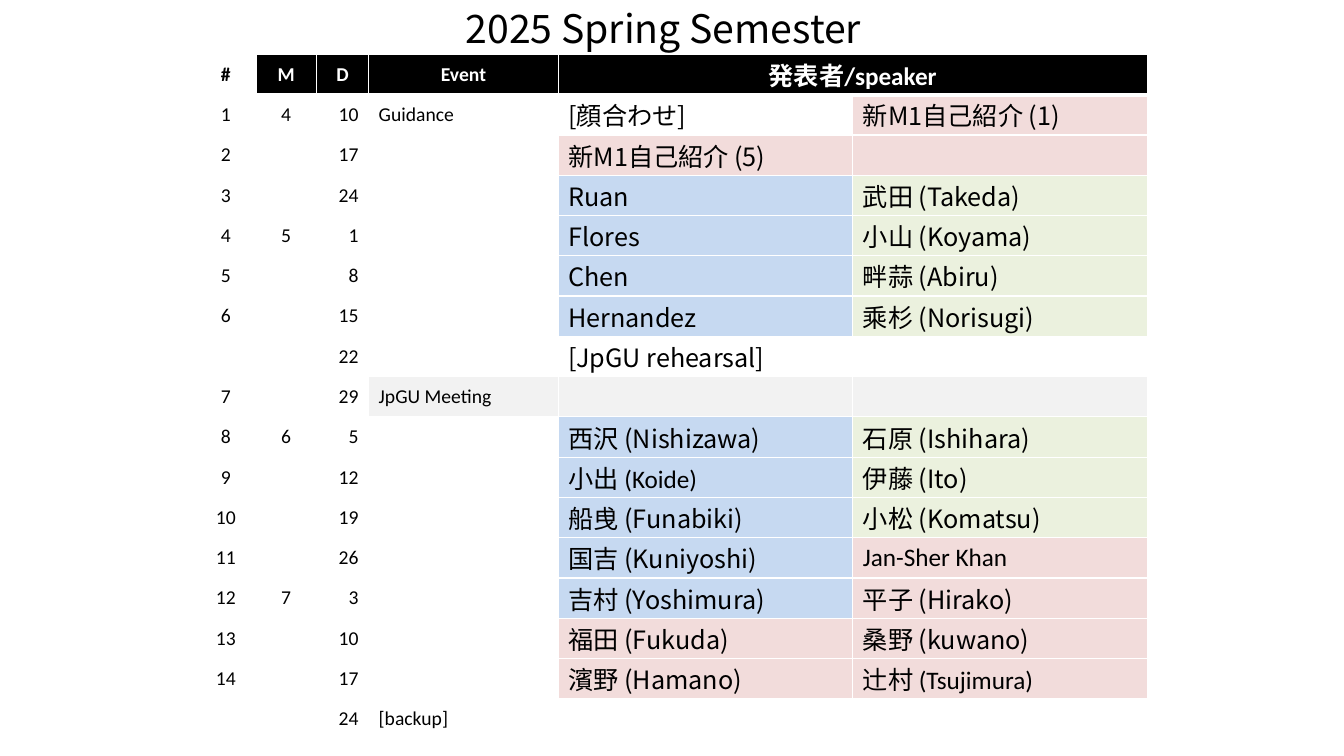
from dataclasses import dataclass

from lxml import etree
from pptx import Presentation
from pptx.dml.color import RGBColor
from pptx.enum.text import MSO_ANCHOR, PP_ALIGN
from pptx.oxml.ns import qn
from pptx.util import Cm, Pt

LEFT, CENTER, RIGHT = PP_ALIGN.LEFT, PP_ALIGN.CENTER, PP_ALIGN.RIGHT
MIDDLE = MSO_ANCHOR.MIDDLE


@dataclass(frozen=True)
class Theme:
    latin: str = "Calibri"
    japanese: str = "Noto Sans CJK JP"
    title_size: int = 28
    speaker_size: int = 18
    body_size: int = 14
    ink: str = "000000"
    paper: str = "FFFFFF"
    blue: str = "C6D9F1"
    green: str = "EBF1DE"
    pink: str = "F2DCDB"
    gray: str = "F2F2F2"


THEME = Theme()
BLUE, GREEN, PINK, GRAY = THEME.blue, THEME.green, THEME.pink, THEME.gray

COLUMN_WIDTHS = [1.52, 1.52, 1.32, 4.78, 7.42, 7.42]
COLUMN_ALIGNS = [CENTER, CENTER, RIGHT, LEFT, LEFT, LEFT]
HEADERS = ["#", "M", "D", "Event", "発表者/speaker"]
CALIBRI_TAILS = ("(Koide)", "Jan-Sher Khan", "(Tsujimura)")
SCHEDULE = [
    ("1", "4", "10", "Guidance", "[顔合わせ]", None, "新M1自己紹介 (1)", PINK),
    ("2", "", "17", "", "新M1自己紹介 (5)", PINK, "", PINK),
    ("3", "", "24", "", "Ruan", BLUE, "武田 (Takeda)", GREEN),
    ("4", "5", "1", "", "Flores", BLUE, "小山 (Koyama)", GREEN),
    ("5", "", "8", "", "Chen", BLUE, "畔蒜 (Abiru)", GREEN),
    ("6", "", "15", "", "Hernandez", BLUE, "乘杉 (Norisugi)", GREEN),
    ("", "", "22", "", "[JpGU rehearsal]", None, "", None),
    ("7", "", "29", "JpGU Meeting", "", GRAY, "", GRAY),
    ("8", "6", "5", "", "西沢 (Nishizawa)", BLUE, "石原 (Ishihara)", GREEN),
    ("9", "", "12", "", "小出 (Koide)", BLUE, "伊藤 (Ito)", GREEN),
    ("10", "", "19", "", "船曵 (Funabiki)", BLUE, "小松 (Komatsu)", GREEN),
    ("11", "", "26", "", "国吉 (Kuniyoshi)", BLUE, "Jan-Sher Khan", PINK),
    ("12", "7", "3", "", "吉村 (Yoshimura)", BLUE, "平子 (Hirako)", PINK),
    ("13", "", "10", "", "福田 (Fukuda)", PINK, "桑野 (kuwano)", PINK),
    ("14", "", "17", "", "濱野 (Hamano)", PINK, "辻村 (Tsujimura)", PINK),
    ("", "", "24", "[backup]", "", None, "", None),
]


def add_text(p, text, *, font=THEME.latin, size=THEME.body_size,
             color=THEME.ink, bold=False, align=LEFT):
    p.alignment = align
    r = p.add_run()
    r.text = text
    r.font.name = font
    r.font.size = Pt(size)
    r.font.bold = bold
    r.font.color.rgb = RGBColor.from_string(color)
    east_asian = etree.Element(qn("a:ea"), typeface=THEME.japanese)
    r.font._element.find(qn("a:latin")).addnext(east_asian)


def add_speaker(p, text):
    tail = next((t for t in CALIBRI_TAILS if text.endswith(t)), "")
    for part, font in ((text.removesuffix(tail), THEME.japanese), (tail, THEME.latin)):
        if part:
            add_text(p, part, font=font, size=THEME.speaker_size)


class SlideBuilder:
    def __init__(self, prs, theme):
        self.theme = theme
        self.s = prs.slides.add_slide(prs.slide_layouts[5])

    def title(self, text, left, top, width, height):
        sp = self.s.shapes.title
        sp.left, sp.top, sp.width, sp.height = map(Cm, (left, top, width, height))
        tf = sp.text_frame
        tf.word_wrap = False
        tf.vertical_anchor = MIDDLE
        tf.margin_top = tf.margin_bottom = 0
        add_text(tf.paragraphs[0], text, font=self.theme.japanese,
                 size=self.theme.title_size)

    def format_cell(self, cell, fill, top=1, bottom=1):
        cell.vertical_anchor = MIDDLE
        cell.margin_top = cell.margin_bottom = 0
        if fill:
            cell.fill.solid()
            cell.fill.fore_color.rgb = RGBColor.from_string(fill)
        else:
            cell.fill.background()
        borders = (("L", 1), ("R", 1), ("T", top), ("B", bottom))
        for i, (side, width) in enumerate(borders):
            ln = etree.Element(qn(f"a:ln{side}"), w=str(Pt(width)))
            solid = etree.SubElement(ln, qn("a:solidFill"))
            etree.SubElement(solid, qn("a:srgbClr"), val=self.theme.paper)
            cell._tc.get_or_add_tcPr().insert(i, ln)

    def table(self, left, top, height):
        count = len(SCHEDULE) + 1
        frame = self.s.shapes.add_table(
            count, len(COLUMN_WIDTHS), Cm(left), Cm(top),
            Cm(sum(COLUMN_WIDTHS)), Cm(height))
        table = frame.table
        table.first_row = table.horz_banding = False
        for column, width in zip(table.columns, COLUMN_WIDTHS):
            column.width = Cm(width)
        for row in table.rows:
            row.height = Cm(height / count)
        self.header(table)
        for i, entry in enumerate(SCHEDULE, 1):
            self.week(table, i, entry)

    def header(self, table):
        theme = self.theme
        table.cell(0, 4).merge(table.cell(0, 5))
        for j in range(len(COLUMN_WIDTHS)):
            self.format_cell(table.cell(0, j), theme.ink if j else None, bottom=3)
        for j, label in enumerate(HEADERS):
            add_text(table.cell(0, j).text_frame.paragraphs[0], label, bold=True,
                     align=CENTER, color=theme.paper if j else theme.ink,
                     size=theme.speaker_size if j == 4 else theme.body_size)

    def week(self, table, i, entry):
        number, month, day, event, first, first_fill, second, second_fill = entry
        texts = (number, month, day, event, first, second)
        event_fill = GRAY if first_fill == GRAY else None
        fills = (None, None, None, event_fill, first_fill, second_fill)
        for j, (text, fill) in enumerate(zip(texts, fills)):
            cell = table.cell(i, j)
            self.format_cell(cell, fill, top=3 if i == 1 else 1)
            p = cell.text_frame.paragraphs[0]
            if text and j >= 4:
                add_speaker(p, text)
            elif text:
                add_text(p, text, align=COLUMN_ALIGNS[j])


def main():
    prs = Presentation()
    prs.slide_width, prs.slide_height = Cm(33.87), Cm(19.05)
    slide = SlideBuilder(prs, THEME)
    slide.title("2025 Spring Semester", 11.48, -0.02, 10.92, 1.45)
    slide.table(4.93, 1.37, 17.27)
    prs.save("out.pptx")


if __name__ == "__main__":
    main()
